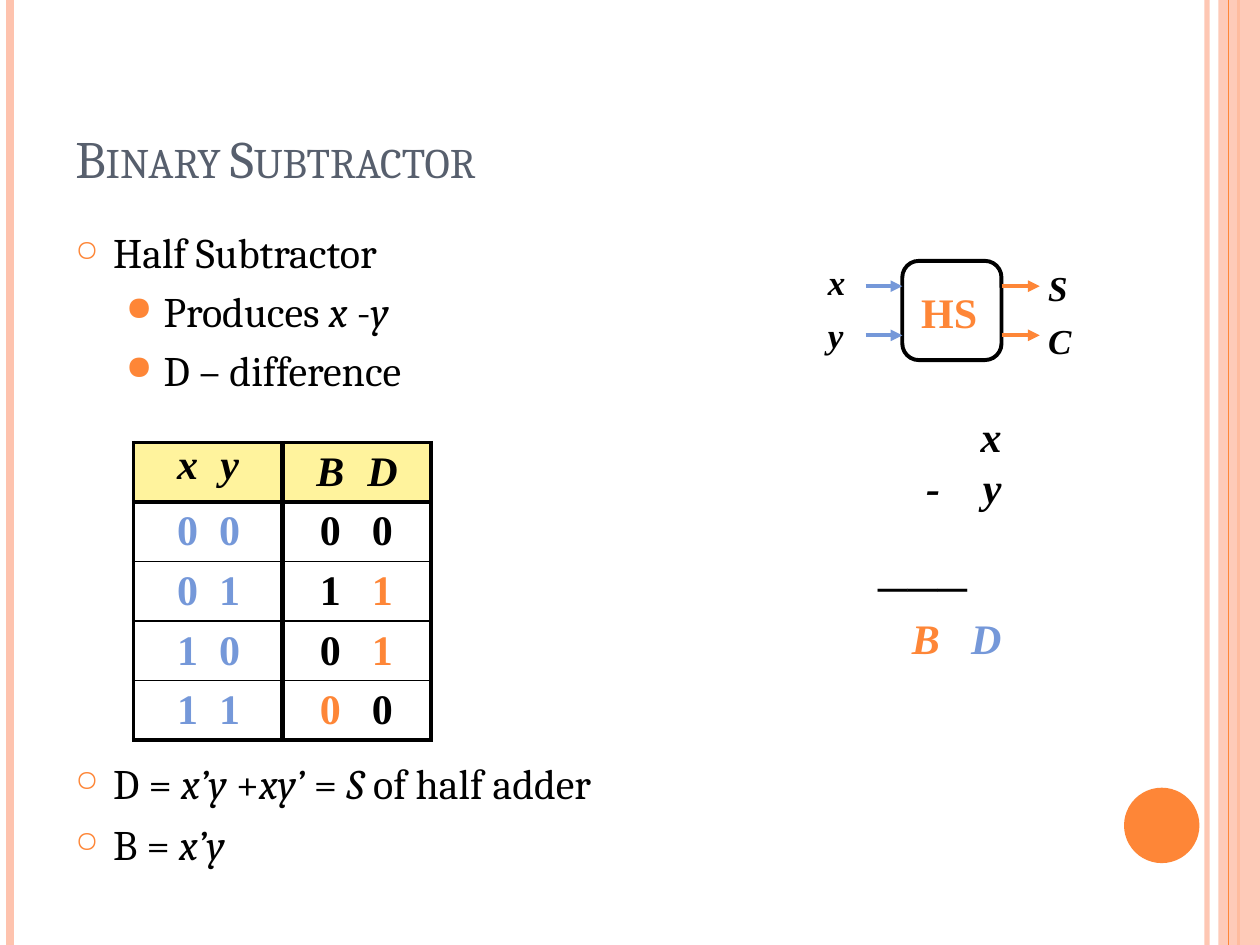
from dataclasses import dataclass

from lxml.etree import SubElement
from pptx import Presentation
from pptx.dml.color import RGBColor
from pptx.enum.shapes import MSO_CONNECTOR, MSO_SHAPE
from pptx.enum.text import MSO_ANCHOR
from pptx.oxml.ns import qn
from pptx.util import Cm, Pt


@dataclass(frozen=True)
class Theme:
    orange: str = "FE8637"
    peach: str = "FEC3AE"
    blue: str = "7598D9"
    yellow: str = "FFF39D"
    slate: str = "575F6D"
    black: str = "000000"
    serif: str = "Cambria"
    roman: str = "Times New Roman"
    title_size: int = 30
    text_size: int = 24
    label_size: int = 20


T = Theme()
WIDTH, HEIGHT = 25.4, 19.05


def add_xml(parent, tag, **attrs):
    return SubElement(parent, qn(tag), {k: str(v) for k, v in attrs.items()})


def set_alpha(fill_owner, percent):
    color = next(fill_owner.iter(qn("a:srgbClr")))
    add_xml(color, "a:alpha", val=percent * 1000)


def add_line(s, start, end, color, width, arrow=False):
    c = s.shapes.add_connector(MSO_CONNECTOR.STRAIGHT, *map(Cm, start + end))
    c.line.color.rgb = RGBColor.from_string(color)
    c.line.width = Pt(width)
    if arrow:
        add_xml(c.line._get_or_add_ln(), "a:tailEnd", type="triangle")
    add_xml(c._element.spPr, "a:effectLst")
    return c


def add_block(s, kind, box, fill=None, line=None):
    sp = s.shapes.add_shape(kind, *map(Cm, box))
    sp.shadow.inherit = False
    if fill:
        sp.fill.solid()
        sp.fill.fore_color.rgb = RGBColor.from_string(fill)
    else:
        sp.fill.background()
    if line:
        sp.line.color.rgb = RGBColor.from_string(line)
        sp.line.width = Pt(2.25)
    else:
        sp.line.fill.background()
    return sp


def add_frame(s, box, inset=True, wrap=True):
    tf = s.shapes.add_textbox(*map(Cm, box)).text_frame
    tf.word_wrap = wrap
    if not inset:
        tf.margin_left = tf.margin_top = tf.margin_right = tf.margin_bottom = 0
    return tf


def next_paragraph(tf):
    p = tf.paragraphs[0]
    return tf.add_paragraph() if p.runs else p


def set_font(p, name, size, color=T.black, bold=None, italic=None):
    p.font.name, p.font.size = name, Pt(size)
    p.font.bold, p.font.italic = bold, italic
    p.font.color.rgb = RGBColor.from_string(color)


def add_tabs(p, stops, align):
    tabs = add_xml(p._p.get_or_add_pPr(), "a:tabLst")
    for stop in stops:
        add_xml(tabs, "a:tab", pos=Cm(stop), algn=align)


def add_pair(p, pair, colors):
    for text, color in zip(pair, colors):
        r = p.add_run()
        r.text = f"\t{text}"
        r.font.color.rgb = RGBColor.from_string(color)


def add_bullet(tf, marked_text, level=0):
    p = next_paragraph(tf)
    p.level = level
    p.space_before = Pt((6, 4.8)[level])
    pPr = p._p.get_or_add_pPr()
    pPr.set("marL", str(Cm((0.76, 1.78)[level])))
    pPr.set("indent", str(Cm(-0.76)))
    add_xml(add_xml(pPr, "a:buClr"), "a:srgbClr", val=T.orange)
    add_xml(pPr, "a:buSzPct", val=(70000, 80000)[level])
    add_xml(pPr, "a:buChar", char="○●"[level])
    set_font(p, T.serif, T.text_size)
    for i, text in enumerate(marked_text.split("*")):
        if text:
            r = p.add_run()
            r.text = text
            r.font.italic = i % 2 == 1


def add_labels(s, box, labels):
    tf = add_frame(s, box, inset=False)
    for label in labels:
        p = next_paragraph(tf)
        p.text = label
        p.space_before = Pt(6)
        set_font(p, T.roman, T.label_size, bold=True, italic=True)


def set_borders(cell, **widths):
    tcPr = cell._tc.get_or_add_tcPr()
    for i, (side, width) in enumerate(widths.items()):
        ln = add_xml(tcPr, f"a:ln{side}", w=Pt(width))
        add_xml(add_xml(ln, "a:solidFill"), "a:srgbClr", val=T.black)
        tcPr.remove(ln)
        tcPr.insert(i, ln)


def add_truth_table(s):
    k, o, b = T.black, T.orange, T.blue
    rows = [
        (("xy", (k, k)), ("BD", (k, k))),
        (("00", (b, b)), ("00", (k, k))),
        (("01", (b, b)), ("11", (k, o))),
        (("10", (b, b)), ("01", (k, o))),
        (("11", (b, b)), ("00", (o, k))),
    ]
    stops = ((1.09, 1.94), (0.97, 2.02))
    last = len(rows) - 1
    table = s.shapes.add_table(len(rows), 2, Cm(2.69), Cm(8.92), Cm(6), Cm(6)).table
    table.first_row = table.horz_banding = False
    for i, row in enumerate(rows):
        table.rows[i].height = Cm(1.2)
        for j, (pair, colors) in enumerate(row):
            cell = table.cell(i, j)
            cell.margin_left = cell.margin_top = cell.margin_right = cell.margin_bottom = 0
            cell.vertical_anchor = MSO_ANCHOR.TOP if i == j == 0 else MSO_ANCHOR.MIDDLE
            if i == 0:
                cell.fill.solid()
                cell.fill.fore_color.rgb = RGBColor.from_string(T.yellow)
            else:
                cell.fill.background()
            set_borders(cell, L=(2.25, 3)[j], R=(3, 2.25)[j],
                        T={0: 2.25, 1: 3}.get(i, 1), B={0: 3, last: 2.25}.get(i, 1))
            p = cell.text_frame.paragraphs[0]
            add_tabs(p, stops[j], "ctr")
            set_font(p, T.roman, T.text_size, bold=True, italic=i == 0)
            add_pair(p, pair, colors)


def add_decoration(s):
    rails = [(24.33, T.peach, 3), (0.2, T.peach, 4.5), (24.97, T.orange, 1.5)]
    lines = [add_line(s, (x, 0), (x, HEIGHT), c, w) for x, c, w in rails]
    set_alpha(lines[0]._element, 93)
    band = add_block(s, MSO_SHAPE.RECTANGLE, (24.56, 0, 0.84, HEIGHT), T.peach)
    set_alpha(band._element.spPr, 87)
    add_line(s, (24.77, 0), (24.77, HEIGHT), T.orange, 0.75)
    add_block(s, MSO_SHAPE.OVAL, (22.66, 15.88, 1.52, 1.52), T.orange)


def add_title(s, text):
    tf = add_frame(s, (1.27, 0.76, 21.39, 3.18))
    tf.vertical_anchor = MSO_ANCHOR.BOTTOM
    p = tf.paragraphs[0]
    set_font(p, T.serif, T.title_size, T.slate)
    r = p.add_run()
    r.text = text
    r._r.get_or_add_rPr().set("cap", "small")


def add_half_subtractor(s):
    add_block(s, MSO_SHAPE.ROUNDED_RECTANGLE, (18.19, 5.26, 2, 2), line=T.black)
    for y in (5.77, 6.76):
        add_line(s, (17.45, y), (18.19, y), T.blue, 2.25, arrow=True)
        add_line(s, (20.19, y), (20.96, y), T.orange, 2.25, arrow=True)
    p = add_frame(s, (18.57, 5.77, 1.14, 1.02), inset=False, wrap=False).paragraphs[0]
    p.text = "HS"
    set_font(p, T.roman, T.text_size, T.orange, bold=True)
    add_labels(s, (16.69, 5.26, 0.51, 1.73), "xy")
    add_labels(s, (21.13, 5.38, 0.51, 1.73), "SC")


def add_difference(s):
    tf = add_frame(s, (17.7, 8.28, 2.6, 4.11), inset=False)
    plain = (T.black, T.black)
    for pair, colors in [(("", "x"), plain), (("-", "y"), plain),
                         (("", "───"), plain), (("B", "D"), (T.orange, T.blue))]:
        p = next_paragraph(tf)
        add_tabs(p, (1.25, 2.49), "r")
        set_font(p, T.roman, T.text_size, bold=True, italic=True)
        add_pair(p, pair, colors)


def main():
    prs = Presentation()
    prs.slide_width, prs.slide_height = Cm(WIDTH), Cm(HEIGHT)
    s = prs.slides.add_slide(prs.slide_layouts[6])
    add_decoration(s)
    add_title(s, "Binary Subtractor")
    tf = add_frame(s, (1.27, 4.45, 14, 4))
    add_bullet(tf, "Half Subtractor")
    add_bullet(tf, "Produces *x* -*y*", level=1)
    add_bullet(tf, "D – difference", level=1)
    tf = add_frame(s, (1.27, 15.14, 21.39, 2.84))
    add_bullet(tf, "D = *x’y* +*xy’* = *S* of half adder")
    add_bullet(tf, "B = *x’y*")
    add_half_subtractor(s)
    add_truth_table(s)
    add_difference(s)
    prs.save("out.pptx")


if __name__ == "__main__":
    main()
